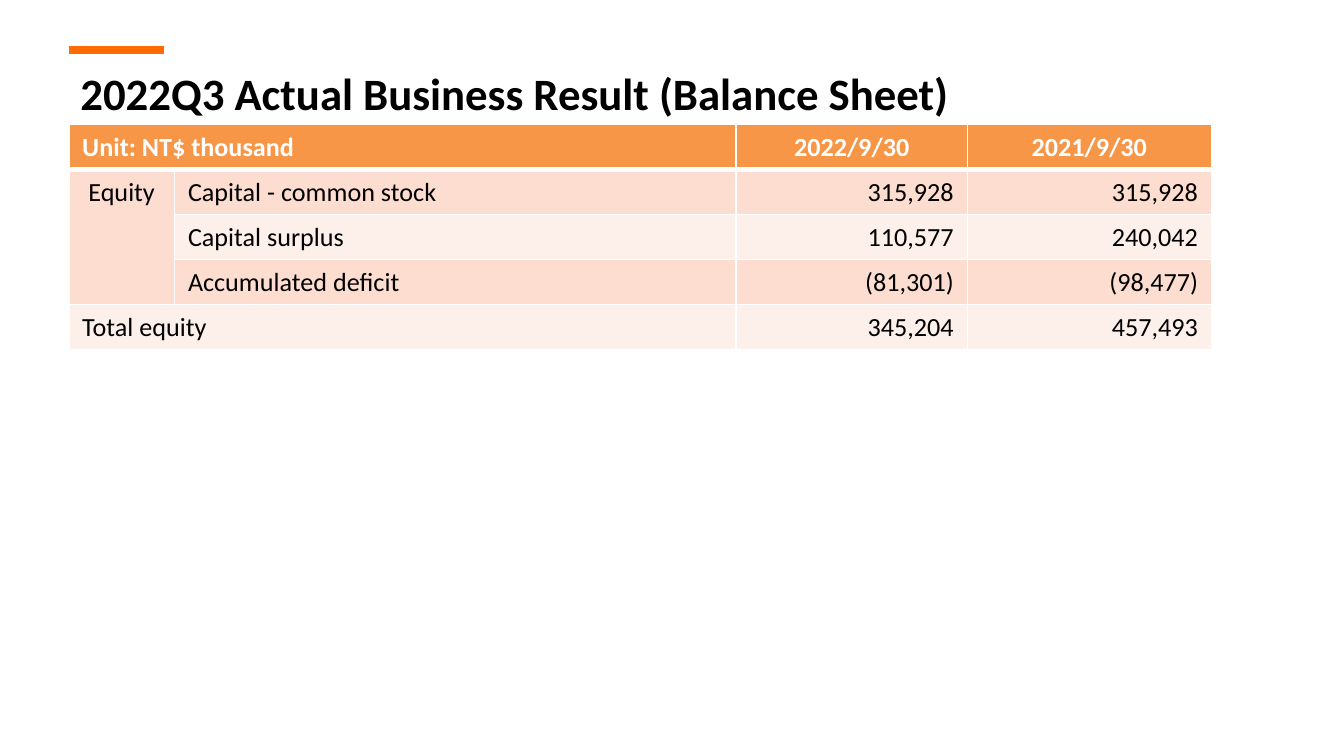
from lxml import etree
from pptx import Presentation
from pptx.dml.color import RGBColor
from pptx.enum.shapes import MSO_CONNECTOR
from pptx.enum.text import MSO_ANCHOR, PP_ALIGN
from pptx.oxml.ns import qn
from pptx.util import Cm, Pt

STRAIGHT = MSO_CONNECTOR.STRAIGHT
MIDDLE = MSO_ANCHOR.MIDDLE
LEFT, CENTER, RIGHT = PP_ALIGN.LEFT, PP_ALIGN.CENTER, PP_ALIGN.RIGHT
FONT = "Calibri"
BLACK, WHITE = "000000", "FFFFFF"
ACCENT, HEADER_FILL = "FF6B00", "F79646"
BAND_FILLS = ("FCDDCF", "FDEFE9")
COLUMN_WIDTHS = (2, 10.62, 4.37, 4.62)
BALANCE_ROWS = (
    ("Unit: NT$ thousand", "", "2022/9/30", "2021/9/30"),
    ("Equity", "Capital - common stock", "315,928", "315,928"),
    ("", "Capital surplus", "110,577", "240,042"),
    ("", "Accumulated deficit", "(81,301)", "(98,477)"),
    ("Total equity", "", "345,204", "457,493"),
)
MERGES = (((0, 0), (0, 1)), ((1, 0), (3, 0)), ((4, 0), (4, 1)))


def color(value):
    return RGBColor.from_string(value)


def style_paragraph(paragraph, size, font_color, bold, alignment=LEFT):
    paragraph.alignment = alignment
    font = paragraph.font
    font.name = FONT
    font.size = Pt(size)
    font.bold = bold
    font.color.rgb = color(font_color)


def add_accent(slide, left, top, width):
    line = slide.shapes.add_connector(STRAIGHT, Cm(left), Cm(top), Cm(left + width), Cm(top))
    line.line.color.rgb = color(ACCENT)
    line.line.width = Pt(4.5)
    properties = line.element.find(qn("p:spPr"))
    etree.SubElement(properties, qn("a:effectLst"))


def add_title(slide, left, top, width, height):
    shape = slide.shapes.add_textbox(Cm(left), Cm(top), Cm(width), Cm(height))
    frame = shape.text_frame
    frame.word_wrap = True
    frame.vertical_anchor = MIDDLE
    frame.text = "2022Q3 Actual Business Result (Balance Sheet)"
    style_paragraph(frame.paragraphs[0], 24, BLACK, True)


def add_border(cell, side, width):
    properties = cell._tc.get_or_add_tcPr()
    line = etree.SubElement(properties, qn("a:ln" + side), w=str(Pt(width)))
    fill = etree.SubElement(line, qn("a:solidFill"))
    etree.SubElement(fill, qn("a:srgbClr"), val=WHITE)


def style_cell(cell, row, column):
    header = row == 0
    for side in "LRTB":
        thick = (header and side == "B") or (row == 1 and side == "T")
        add_border(cell, side, 3 if thick else 1)
    cell.fill.solid()
    cell.fill.fore_color.rgb = color(HEADER_FILL if header else BAND_FILLS[(row - 1) % 2])
    if column > 1:
        alignment = CENTER if header else RIGHT
    else:
        alignment = CENTER if (row, column) == (1, 0) else LEFT
    style_paragraph(cell.text_frame.paragraphs[0], 14, WHITE if header else BLACK, header, alignment)


def add_balance_sheet(slide, left, top, width, height):
    frame = slide.shapes.add_table(
        len(BALANCE_ROWS), len(COLUMN_WIDTHS), Cm(left), Cm(top), Cm(width), Cm(height)
    )
    table = frame.table
    for column, share in zip(table.columns, COLUMN_WIDTHS):
        column.width = Cm(width * share / sum(COLUMN_WIDTHS))
    for row, values in enumerate(BALANCE_ROWS):
        for column, value in enumerate(values):
            cell = table.cell(row, column)
            cell.text = value
            style_cell(cell, row, column)
    for first, last in MERGES:
        table.cell(*first).merge(table.cell(*last))


def main():
    presentation = Presentation()
    presentation.slide_width = Cm(25.4)
    presentation.slide_height = Cm(14.28)
    slide = presentation.slides.add_slide(presentation.slide_layouts[6])
    add_accent(slide, 1.3, 0.94, 1.8)
    add_title(slide, 1.27, 0.94, 24.43, 1.6)
    add_balance_sheet(slide, 1.3, 2.35, 21.6, 4.25)
    presentation.save("out.pptx")


if __name__ == "__main__":
    main()
